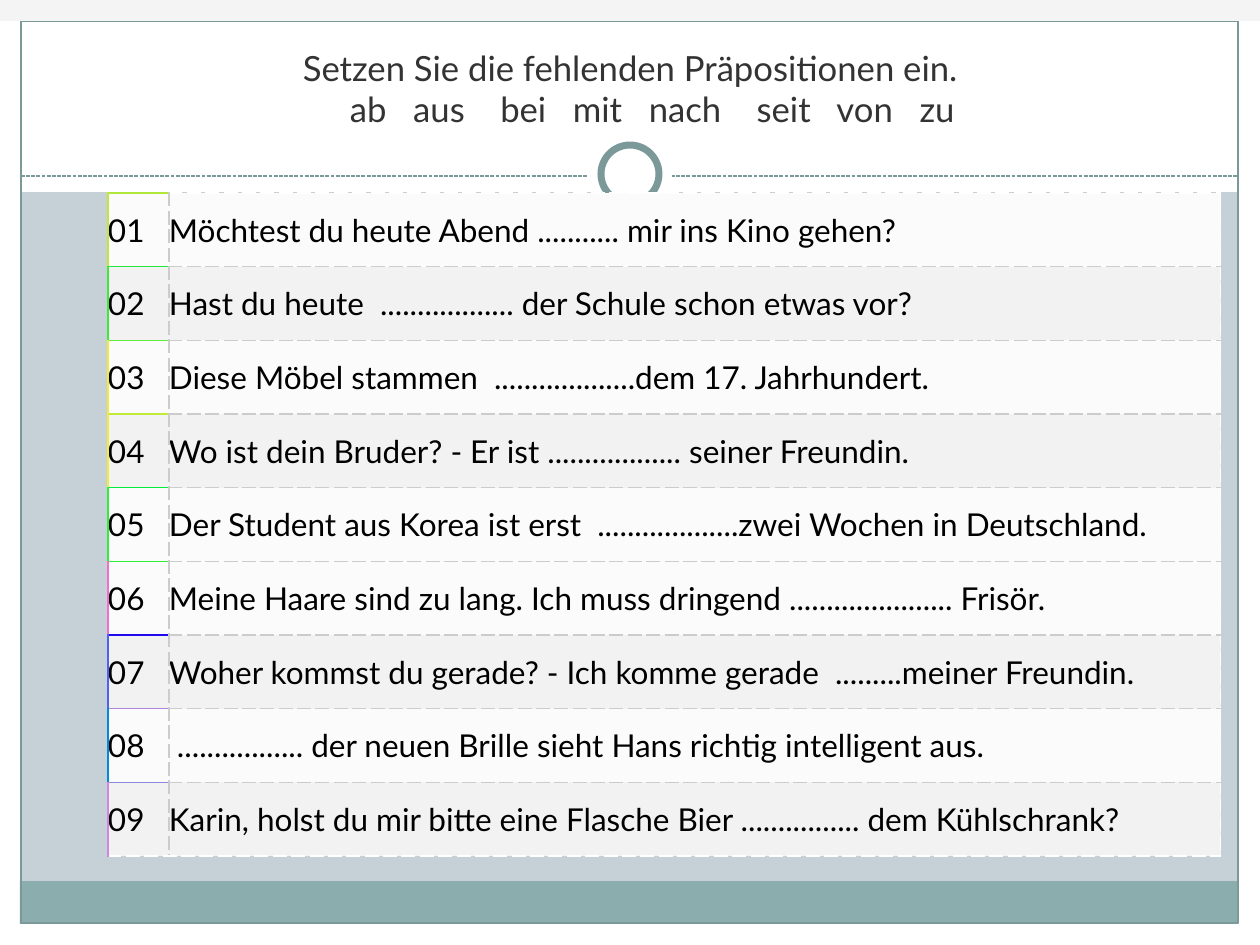
from lxml import etree
from pptx import Presentation, util as u
from pptx.dml.color import RGBColor
from pptx.enum import dml, shapes, text
from pptx.oxml.ns import qn

PX = 914400 / 126
FONT = "Lato"
TEAL, WHITE, GREY = "7C999A", "FFFFFF", "CCCCCC"
rgb = RGBColor.from_string

prs = Presentation()
prs.slide_width, prs.slide_height = u.Inches(10), u.Inches(7.5)
slide = prs.slides.add_slide(prs.slide_layouts[6])
slide.background.fill.solid()
slide.background.fill.fore_color.rgb = rgb("C5D1D7")


def add_panel(kind, box, fill=None, line=None, width=0.75):
    panel = slide.shapes.add_shape(kind, *[round(n * PX) for n in box])
    panel.shadow.inherit = False
    if fill:
        panel.fill.solid()
        panel.fill.fore_color.rgb = rgb(fill)
    else:
        panel.fill.background()
    if line:
        panel.line.color.rgb = rgb(line)
        panel.line.width = u.Pt(width)
    else:
        panel.line.fill.background()


def add_border(cell, side, color, dash):
    line = etree.SubElement(cell._tc.get_or_add_tcPr(), qn(f"a:ln{side}"), w=str(u.Pt(0.75)))
    fill = etree.SubElement(line, qn("a:solidFill"))
    etree.SubElement(fill, qn("a:srgbClr"), val=color)
    etree.SubElement(line, qn("a:prstDash"), val=dash)


# White margins, header area, footer band and frame
RECT, OVAL = shapes.MSO_SHAPE.RECTANGLE, shapes.MSO_SHAPE.OVAL
for margin in [(0, 924, 1260, 21), (0, 0, 1260, 192), (0, 0, 21, 945), (1239, 0, 21, 945)]:
    add_panel(RECT, margin, WHITE)
add_panel(RECT, (20, 881, 1217, 43), "8CADAE")
add_panel(RECT, (21, 21, 1217, 902), line=TEAL)

# Dashed divider with ring
divider = slide.shapes.add_connector(
    shapes.MSO_CONNECTOR.STRAIGHT, *[round(n * PX) for n in (21, 176, 1239, 176)])
divider.line.color.rgb = rgb(TEAL)
divider.line.width = u.Pt(0.75)
divider.line.dash_style = dml.MSO_LINE.SQUARE_DOT
etree.SubElement(divider._element.spPr, qn("a:effectLst"))
add_panel(OVAL, (588, 132, 84, 84), WHITE)
add_panel(OVAL, (601, 145, 58, 58), WHITE, TEAL, 4)

# Title with the prepositions to choose from
title = slide.shapes.add_textbox(*[round(n * PX) for n in (42, 32, 1176, 104)])
title.text_frame.word_wrap = True
title.text_frame.vertical_anchor = text.MSO_ANCHOR.BOTTOM
heading = title.text_frame.paragraphs[0]
heading.text = ("Setzen Sie die fehlenden Präpositionen ein.\n"
                "     ab   aus    bei   mit   nach    seit   von   zu")
heading.alignment = text.PP_ALIGN.CENTER
for run in heading.runs:
    run.font.name, run.font.size = FONT, u.Pt(19.8)
    run.font.color.rgb = rgb("333333")

# Exercises: sentence, row fill, left border and bottom border of the number
LIGHT, DARK = "FBFBFB", "F2F2F2"
exercises = [
    ("Möchtest du heute Abend ........... mir ins Kino gehen?", LIGHT, "C0E739", "20E939"),
    ("Hast du heute  .................. der Schule schon etwas vor?", DARK, "40E939", "60EA39"),
    ("Diese Möbel stammen  ...................dem 17. Jahrhundert.", LIGHT, "F0EA39", "C0EC39"),
    ("Wo ist dein Bruder? - Er ist .................. seiner Freundin.", DARK, "F0EC39", "00EE39"),
    ("Der Student aus Korea ist erst  ...................zwei Wochen in Deutschland.",
     LIGHT, "30EE39", "30EF39"),
    ("Meine Haare sind zu lang. Ich muss dringend ...................... Frisör.",
     LIGHT, "F06FCD", "2009EE"),
    ("Woher kommst du gerade? - Ich komme gerade  .........meiner Freundin.",
     DARK, "5061EF", "B087DE"),
    (" ................. der neuen Brille sieht Hans richtig intelligent aus.",
     LIGHT, "008ADE", "9087DE"),
    ("Karin, holst du mir bitte eine Flasche Bier ................ dem Kühlschrank?",
     DARK, "D087DE", WHITE),
]
last = len(exercises) - 1
grid = slide.shapes.add_table(
    len(exercises), 2, *[round(n * PX) for n in (108, 193, 1113, 663)]).table
grid.first_row = grid.horz_banding = False
for column, width in zip(grid.columns, (61, 1052)):
    column.width = round(width * PX)

top = "B0E739"
for i, (sentence, fill, left, bottom) in enumerate(exercises):
    grid.rows[i].height = round(663 * PX / len(exercises))
    number_borders = [("L", left, "solid"), ("R", GREY, "dash"), ("T", top, "solid"),
                      ("B", bottom, "dash" if i == last else "solid")]
    sentence_borders = [("L", GREY, "dash"), ("R", WHITE, "dash"),
                        ("T", GREY if i else WHITE, "dash"),
                        ("B", WHITE if i == last else GREY, "dash")]
    contents = [(f"{i + 1:02}", number_borders), (sentence, sentence_borders)]
    for cell, (wording, borders) in zip(grid.rows[i].cells, contents):
        cell.margin_left = cell.margin_right = cell.margin_top = cell.margin_bottom = 0
        cell.vertical_anchor = text.MSO_ANCHOR.MIDDLE
        for border in borders:
            add_border(cell, *border)
        cell.fill.solid()
        cell.fill.fore_color.rgb = rgb(fill)
        cell.text_frame.text = wording
        font = cell.text_frame.paragraphs[0].runs[0].font
        font.name, font.size = FONT, u.Pt(18)
        font.color.rgb = rgb("000000")
    top = bottom

# Strip along the top edge
add_panel(RECT, (0, 0, 1260, 21), "F4F4F4")

prs.save("out.pptx")
